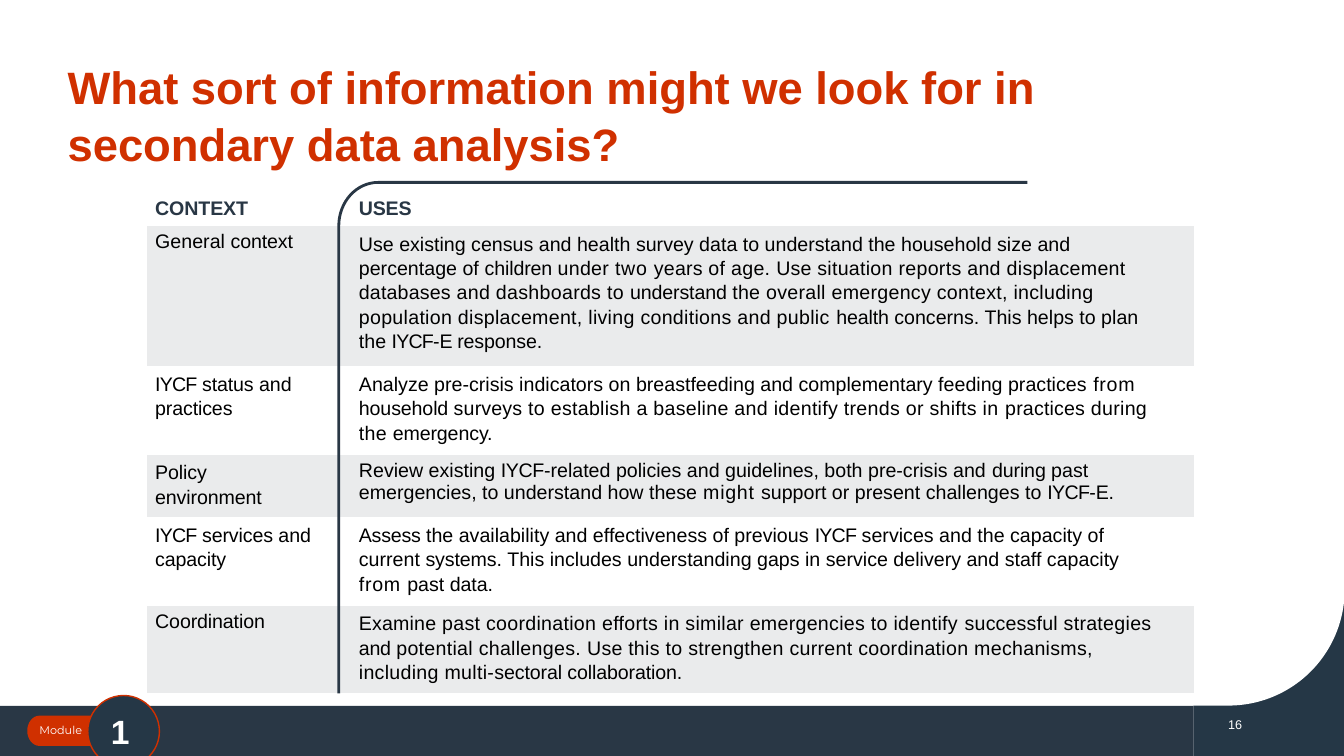
from dataclasses import dataclass
from math import cos, radians, sin
from typing import NamedTuple

from lxml import etree
from pptx import Presentation
from pptx.dml.color import RGBColor
from pptx.enum.shapes import MSO_SHAPE
from pptx.enum.text import MSO_ANCHOR, PP_ALIGN
from pptx.oxml.ns import qn
from pptx.util import Inches, Pt

RECT, ROUND_DIAG, OVAL = MSO_SHAPE.RECTANGLE, MSO_SHAPE.ROUND_2_DIAG_RECTANGLE, MSO_SHAPE.OVAL
LEFT, RIGHT, TOP = PP_ALIGN.LEFT, PP_ALIGN.RIGHT, MSO_ANCHOR.TOP
NO_STYLE = "{2D5ABB26-0587-4C30-8999-92F81FD0307C}"
WIDTH, HEIGHT = Inches(13.33), Inches(7.5)


@dataclass(frozen=True)
class Theme:
    navy: str = "253746"
    slate: str = "293745"
    red: str = "D03000"
    white: str = "FFFFFF"
    black: str = "000000"
    band: str = "EAEBEC"
    font: str = "Arial"
    badge_font: str = "Montserrat"
    title: float = 32.4
    number: float = 24
    body: float = 14
    page: float = 9
    badge: float = 8


class Box(NamedTuple):
    x: float
    y: float
    w: float
    h: float


class Run(NamedTuple):
    text: str
    spacing: float = 0


class Cell(NamedTuple):
    runs: list[Run]
    line_spacing: float = 1.11


class Row(NamedTuple):
    height: float
    context: Cell
    uses: Cell
    right: float = 2.48


class Panel(NamedTuple):
    kind: int
    box: Box
    fill: str
    line: str | None = None


class Label(NamedTuple):
    text: str
    box: Box
    size: float
    color: str
    bold: bool = False
    font: str = "Arial"
    align: int = LEFT
    insets: tuple[float, float] = (0.75, 0.67)
    wrap: bool = True
    line_spacing: float = 1.0


T = Theme()
PANELS = [
    Panel(RECT, Box(88.8, 76, 11.25, 24), T.navy),
    Panel(RECT, Box(0, 93.33, 88.8, 6.67), T.slate),
    Panel(ROUND_DIAG, Box(0, 1.2, 100.05, 92.13), T.white),
]
BADGE = Panel(OVAL, Box(6.53, 92, 5.33, 9.47), T.navy, T.red)
LABELS = [
    Label("16", Box(90.47, 94.13, 2.7, 3.33), T.page, T.white, align=RIGHT, wrap=False),
    Label("Module", Box(2.93, 95.6, 7.65, 2), T.badge, T.white, font=T.badge_font, insets=(0, 0.13)),
    Label("1", Box(7.5, 93.33, 3.45, 6.67), T.number, T.white, bold=True),
    Label("What sort of information might we look for in secondary data analysis?",
          Box(4.05, 5.73, 82.52, 15.6), T.title, T.red, bold=True, insets=(0.98, 1.73), line_spacing=1.05),
]
COLUMNS = (14.48, 63.39)
INDENTS = (0.6, 1.28)
CONTEXT_RIGHT = 2.1
ROWS = [
    Row(4.4, Cell([Run("CONTEXT", -0.1)], 1), Cell([Run("USES", -0.2)], 1)),
    Row(18.53, Cell([Run("General "), Run("context", -0.1)], 1), Cell([
        Run("Use existing census and health survey data to understand the household size and percentage of "),
        Run("children ", -0.1), Run("under ", 0.2), Run("two ", 0.5), Run("years ", 0.1), Run("of age. ", 0.2),
        Run("Use ", 0.1), Run("situation reports and displacement ", 0.2), Run("databases ", 0.1),
        Run("and dashboards to ", 0.2), Run("understand ", -0.1),
        Run("the overall emergency context, including population displacement, living conditions and public ", 0.2),
        Run("health ", -0.1), Run("concerns. This helps to plan the "), Run("IYCF-", -0.6), Run("E ", -0.7),
        Run("response.", -0.1)])),
    Row(11.73, Cell([Run("IYCF ", -0.6), Run("status ", -0.1), Run("and "), Run("practices", -0.1)]), Cell([
        Run("Analyze pre-crisis indicators on breastfeeding and complementary feeding practices "),
        Run("from ", 0.5), Run("household ", -0.1), Run("surveys ", 0.1),
        Run("to establish a baseline and identify trends or shifts in ", 0.2), Run("practices ", 0.1),
        Run("during the ", 0.2), Run("emergency.", -0.1)]), right=3.4),
    Row(8.27, Cell([Run("Policy environment", -0.1)]), Cell([
        Run("Review existing "), Run("IYCF-", -0.3), Run("related policies and guidelines, both pre-crisis and "),
        Run("during ", -0.1), Run("past emergencies, to understand how these "), Run("might ", 0.5),
        Run("support or present challenges to "), Run("IYCF-", -0.5), Run("E.", -0.2)], 1)),
    Row(11.73, Cell([Run("IYCF ", -0.6), Run("services ", -0.1), Run("and "), Run("capacity", -0.1)]), Cell([
        Run("Assess ", -0.2), Run("the availability and effectiveness of previous "), Run("IYCF ", -0.6),
        Run("services and the capacity of current "), Run("systems. ", -0.1),
        Run("This includes understanding gaps in service delivery and staff capacity "),
        Run("from ", 0.5), Run("past "), Run("data.", -0.1)])),
    Row(11.6, Cell([Run("Coordination", -0.1)], 1), Cell([
        Run("Examine ", 0.1), Run("past coordination efforts in similar emergencies to identify ", 0.2),
        Run("successful ", 0.1), Run("strategies ", 0.2), Run("and ", -0.2), Run("potential challenges. ", 0.2),
        Run("Use ", 0.1), Run("this to strengthen current coordination mechanisms, including multi-", 0.2),
        Run("sectoral collaboration.", -0.1)])),
]


def across(share: float) -> int:
    return round(WIDTH * share / 100)


def down(share: float) -> int:
    return round(HEIGHT * share / 100)


def place(box: Box) -> tuple[int, int, int, int]:
    return across(box.x), down(box.y), across(box.w), down(box.h)


def apply(target, values: dict) -> None:
    for name, value in values.items():
        setattr(target, name, value)


def style_run(r, size: float, color: str, bold: bool, font: str) -> None:
    apply(r.font, {"size": Pt(size), "bold": bold, "name": font})
    r.font.color.rgb = RGBColor.from_string(color)


def paint(s, fill: str | None, line: str | None = None, width: float = 1) -> None:
    s.shadow.inherit = False
    for part, color in ((s.fill, fill), (s.line.fill, line)):
        if color:
            part.solid()
            part.fore_color.rgb = RGBColor.from_string(color)
        else:
            part.background()
    if line:
        s.line.width = Pt(width)


def add_panel(sp, panel: Panel) -> None:
    paint(sp.add_shape(panel.kind, *place(panel.box)), panel.fill, panel.line)


def arc(cx: float, cy: float, rx: float, ry: float, start: int, end: int) -> list[tuple[int, int]]:
    angles = [radians(start + (end - start) * i / 16) for i in range(17)]
    return [(across(cx + rx * cos(a)), down(cy + ry * sin(a))) for a in angles]


def add_outline(sp, points: list[tuple[int, int]], close: bool):
    builder = sp.build_freeform(*points[0])
    builder.add_line_segments(points[1:], close=close)
    return builder.convert_to_shape()


def add_label(sp, label: Label) -> None:
    tf = sp.add_textbox(*place(label.box)).text_frame
    dx, dy = across(label.insets[0]), down(label.insets[1])
    apply(tf, {"word_wrap": label.wrap, "vertical_anchor": TOP, "margin_left": dx,
               "margin_right": dx, "margin_top": dy, "margin_bottom": 0})
    p = tf.paragraphs[0]
    apply(p, {"alignment": label.align, "line_spacing": label.line_spacing})
    r = p.add_run()
    r.text = label.text
    style_run(r, label.size, label.color, label.bold, label.font)


def add_uses_table(sp) -> None:
    box = Box(10.95, 25.47, sum(COLUMNS), sum(row.height for row in ROWS))
    table = sp.add_table(len(ROWS), len(COLUMNS), *place(box)).table
    apply(table, {"first_row": False, "horz_banding": False})
    table._tbl.tblPr.find(qn("a:tableStyleId")).text = NO_STYLE
    for column, width in zip(table.columns, COLUMNS):
        column.width = across(width)
    for i, row in enumerate(ROWS):
        table.rows[i].height = down(row.height)
        for j, content in enumerate((row.context, row.uses)):
            cell = table.cell(i, j)
            apply(cell, {"margin_left": across(INDENTS[j]), "margin_top": down(0.67),
                         "margin_right": across((CONTEXT_RIGHT, row.right)[j]), "margin_bottom": down(0.67)})
            cell.fill.solid()
            cell.fill.fore_color.rgb = RGBColor.from_string(T.band if i % 2 else T.white)
            p = cell.text_frame.paragraphs[0]
            p.line_spacing = content.line_spacing
            for run in content.runs:
                r = p.add_run()
                r.text = run.text
                style_run(r, T.body, T.black if i else T.slate, i == 0, T.font)
                r.font._element.set("spc", str(round(run.spacing * 100)))


def main() -> None:
    prs = Presentation()
    apply(prs, {"slide_width": WIDTH, "slide_height": HEIGHT})
    sp = prs.slides.add_slide(prs.slide_layouts[6]).shapes
    for panel in PANELS:
        add_panel(sp, panel)
    tab = arc(2.93, 96.67, 0.9, 2, 270, 90) + [(across(11.03), down(y)) for y in (98.67, 94.67)]
    paint(add_outline(sp, tab, True), T.red)
    add_panel(sp, BADGE)
    add_uses_table(sp)
    rule = [(across(25.21), down(91.73))] + arc(28.14, 29.87, 2.93, 5.74, 180, 270)
    rule.append((across(76.44), down(24.13)))
    paint(add_outline(sp, rule, False), None, T.slate, 2)
    for label in LABELS:
        add_label(sp, label)
    prs.save("out.pptx")


if __name__ == "__main__":
    main()
